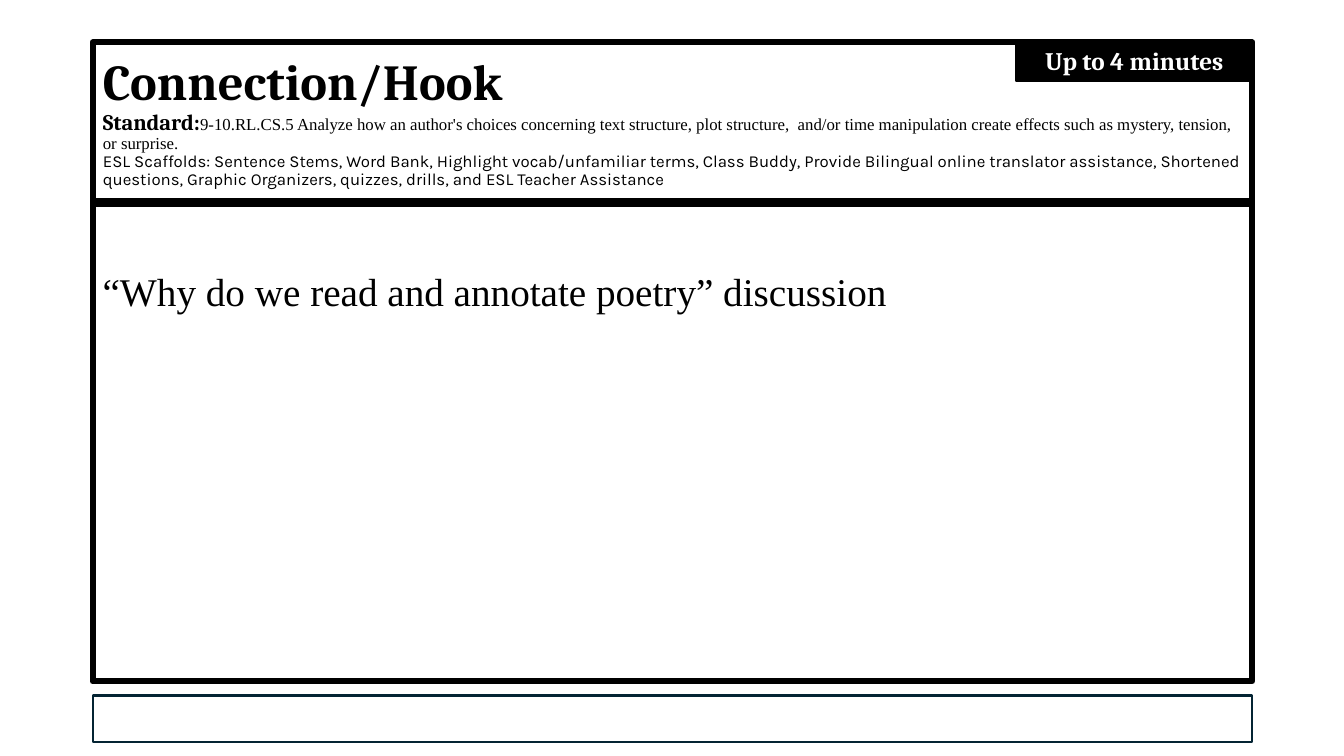
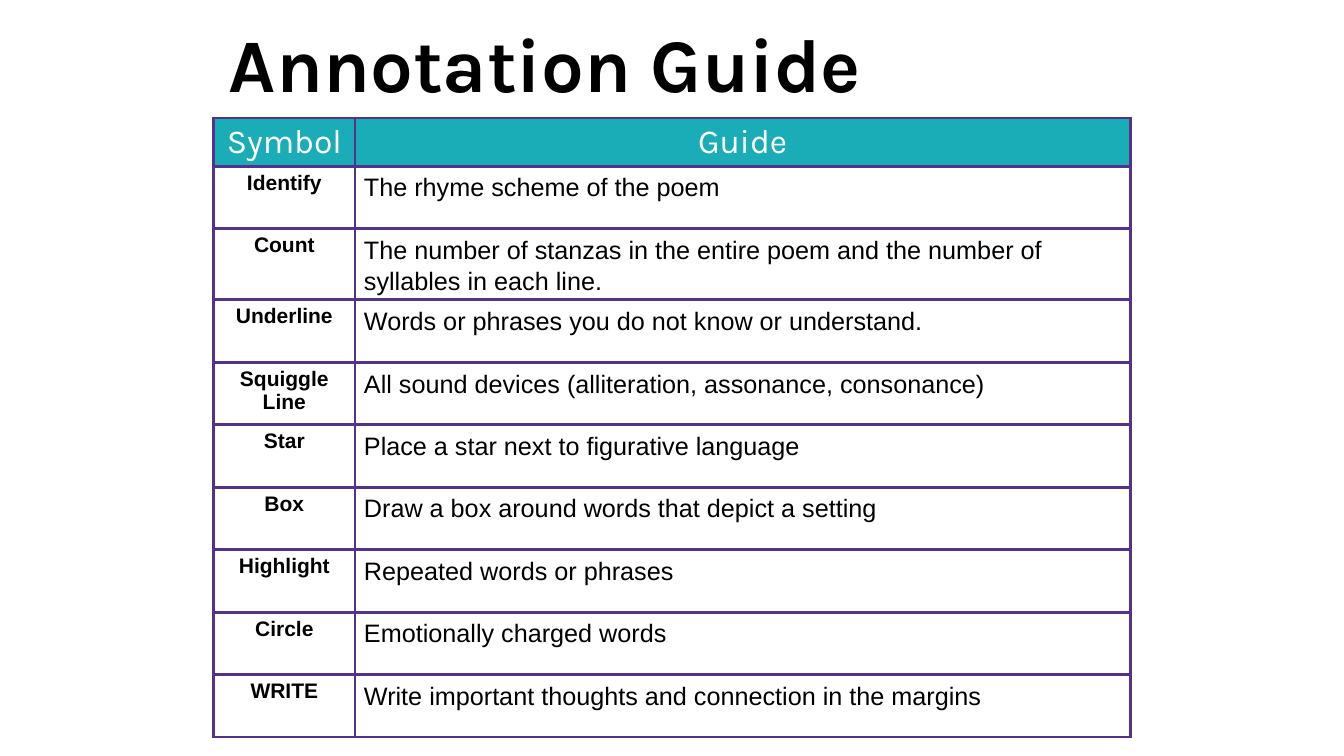
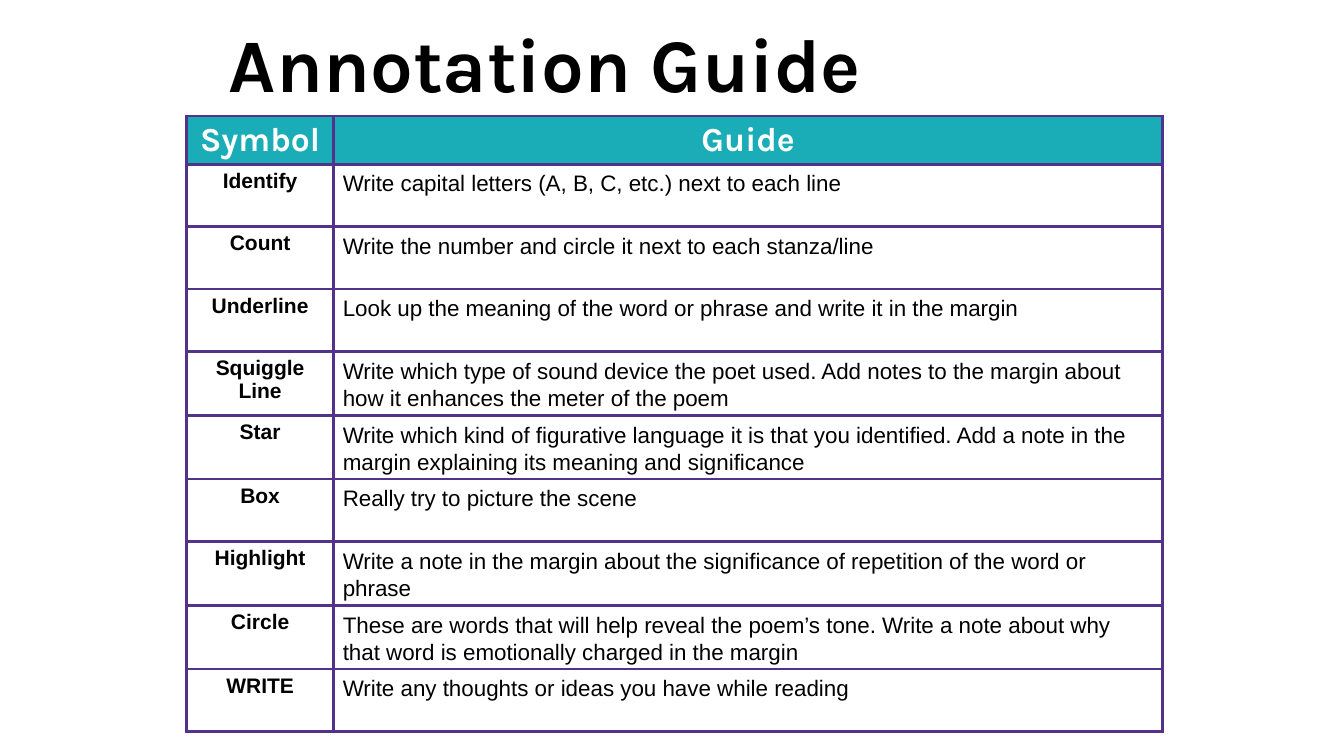
from pptx import Presentation
from pptx import util as u
from pptx.dml.color import RGBColor
from pptx.enum import shapes, text
from pptx.oxml import parse_xml
from pptx.oxml.ns import nsdecls

BLACK, WHITE, NAVY = "000000", "FFFFFF", "042433"
TEAL, PURPLE = "1BADB7", "53328B"
HEAD, BODY, CELL, PLAIN = "Cambria", "Times New Roman", "Arial", "Karla"
LEFT, CENTER = text.PP_ALIGN.LEFT, text.PP_ALIGN.CENTER
TOP, MIDDLE = text.MSO_ANCHOR.TOP, text.MSO_ANCHOR.MIDDLE


def color(code):
    return RGBColor.from_string(code)


class Deck:
    """Holds the shared style and the current slide."""

    def __init__(self):
        self.prs = Presentation()
        self.prs.slide_width = u.Inches(13.33)
        self.prs.slide_height = u.Inches(7.5)

    def page(self):
        self.slide = self.prs.slides.add_slide(self.prs.slide_layouts[5])

    def font(self, item, size, name, ink=BLACK, bold=False):
        font = item.font
        font.size, font.name, font.bold = u.Pt(size), name, bold
        font.color.rgb = color(ink)

    def place(self, shape, box):
        shape.left, shape.top, shape.width, shape.height = map(u.Inches, box)

    def edge(self, shape, ink, width):
        shape.line.color.rgb = color(ink)
        shape.line.width = u.Pt(width)

    def frame(self, shape, align=LEFT, anchor=MIDDLE, space=1.0):
        frame = shape.text_frame
        frame.word_wrap = True
        frame.auto_size = text.MSO_AUTO_SIZE.NONE
        frame.vertical_anchor = anchor
        para = frame.paragraphs[0]
        para.alignment, para.line_spacing = align, space
        return para

    def title(self, box):
        shape = self.slide.shapes.title
        self.place(shape, box)
        return shape, self.frame(shape, space=0.9)

    def rect(self, box, line, width, fill=None):
        shape = self.slide.shapes.add_shape(
            shapes.MSO_SHAPE.RECTANGLE, *map(u.Inches, box))
        shape.shadow.inherit = False
        if fill:
            shape.fill.solid()
            shape.fill.fore_color.rgb = color(fill)
        else:
            shape.fill.background()
        self.edge(shape, line, width)
        return shape

    def cell(self, cell, words, fill, align, space, style):
        cell.margin_left = cell.margin_right = u.Inches(0.09)
        cell.margin_top, cell.margin_bottom = u.Inches(0.05), u.Inches(0.04)
        para = cell.text_frame.paragraphs[0]
        para.text = words
        para.alignment, para.line_spacing = align, space
        self.font(para, *style)
        # Borders go ahead of the fill
        props = cell._tc.get_or_add_tcPr()
        for side in ("lnL", "lnR", "lnT", "lnB"):
            props.append(parse_xml(
                f'<a:{side} {nsdecls("a")} w="{u.Pt(2.25)}"><a:solidFill>'
                f'<a:srgbClr val="{PURPLE}"/></a:solidFill></a:{side}>'))
        cell.fill.solid()
        cell.fill.fore_color.rgb = color(fill)

    def table(self, left, top, widths, rows, size, bold):
        heights = [0.22] + [0.62] * len(rows)
        box = left, top, sum(widths), sum(heights)
        grid = self.slide.shapes.add_table(
            len(heights), len(widths), *map(u.Inches, box)).table
        for col, width in zip(grid.columns, widths):
            col.width = u.Inches(width)
        for row, height in zip(grid.rows, heights):
            row.height = u.Inches(height)
        for i, words in enumerate(("Symbol", "Guide")):
            self.cell(grid.cell(0, i), words, TEAL, CENTER, 1.0,
                      (24, PLAIN, WHITE, bold))
        for i, (mark, guide) in enumerate(rows, 1):
            self.cell(grid.cell(i, 0), mark, WHITE, CENTER, 1.0,
                      (15, CELL, BLACK, True))
            self.cell(grid.cell(i, 1), guide, WHITE, LEFT, 1.1,
                      (size, CELL))

    def guide(self, left, top, widths, rows, size, bold=False):
        self.page()
        para = self.title((2.17, 0.3, 9, 0.75))[1]
        para.text = "Annotation Guide"
        self.font(para, 54, PLAIN, bold=True)
        self.table(left, top, widths, rows, size, bold)


MARKS = ("Identify", "Count", "Underline", "Squiggle Line", "Star", "Box",
         "Highlight", "Circle", "WRITE")
FIND = (
    "The rhyme scheme of the poem",
    "The number of stanzas in the entire poem and the number of syllables "
    "in each line.",
    "Words or phrases you do not know or understand.",
    "All sound devices (alliteration, assonance, consonance)",
    "Place a star next to figurative language",
    "Draw a box around words that depict a setting",
    "Repeated words or phrases",
    "Emotionally charged words",
    "Write important thoughts and connection in the margins",
)
NOTE = (
    "Write capital letters (A, B, C, etc.) next to each line",
    "Write the number and circle it next to each stanza/line",
    "Look up the meaning of the word or phrase and write it in the margin",
    "Write which type of sound device the poet used. Add notes to the margin "
    "about how it enhances the meter of the poem",
    "Write which kind of figurative language it is that you identified. Add "
    "a note in the margin explaining its meaning and significance",
    "Really try to picture the scene",
    "Write a note in the margin about the significance of repetition of the "
    "word or phrase",
    "These are words that will help reveal the poem’s tone. Write a note "
    "about why that word is emotionally charged in the margin",
    "Write any thoughts or ideas you have while reading",
)
# Each line of the lesson heading is a list of (words, size, font, bold)
HOOK = (
    [("Connection/Hook", 36, HEAD, True)],
    [("Standard:", 16, HEAD, True),
     ("9-10.RL.CS.5 Analyze how an author's choices concerning text "
      "structure, plot structure,  and/or time manipulation create effects "
      "such as mystery, tension, or surprise.", 12, BODY, False)],
    [("ESL Scaffolds: Sentence Stems, Word Bank, Highlight vocab/unfamiliar "
      "terms, Class Buddy, Provide Bilingual online translator assistance, "
      "Shortened questions, Graphic Organizers, quizzes, drills, and ESL "
      "Teacher Assistance", 12, PLAIN, False)],
)


def hook(deck):
    deck.page()
    # Heading with the standard
    shape, para = deck.title((0.92, 0.42, 11.5, 1.6))
    deck.edge(shape, BLACK, 4.5)
    for i, line in enumerate(HOOK):
        if i:
            para.add_line_break()
        for words, size, name, bold in line:
            run = para.add_run()
            run.text = words
            deck.font(run, size, name, bold=bold)
    # Discussion prompt
    body = deck.rect((0.92, 2, 11.5, 4.76), BLACK, 4.5)
    body.text_frame.margin_top = u.Inches(0.7)
    para = deck.frame(body, anchor=TOP, space=0.9)
    para.text = "“Why do we read and annotate poetry” discussion"
    deck.font(para, 28, BODY)
    # Time tag
    tag = deck.rect((10.08, 0.4, 2.34, 0.4), BLACK, 1.5, BLACK)
    para = deck.frame(tag, CENTER)
    para.text = "Up to 4 minutes"
    deck.font(para, 18, HEAD, WHITE, True)
    # Bottom band
    deck.rect((0.92, 6.9, 11.5, 0.46), NAVY, 1.5, WHITE)


def main():
    deck = Deck()
    hook(deck)
    deck.guide(2.12, 1.17, (1.4, 7.69), list(zip(MARKS, FIND)), 18)
    deck.guide(1.85, 1.15, (1.46, 8.22), list(zip(MARKS, NOTE)), 16, True)
    deck.prs.save("out.pptx")


if __name__ == "__main__":
    main()
